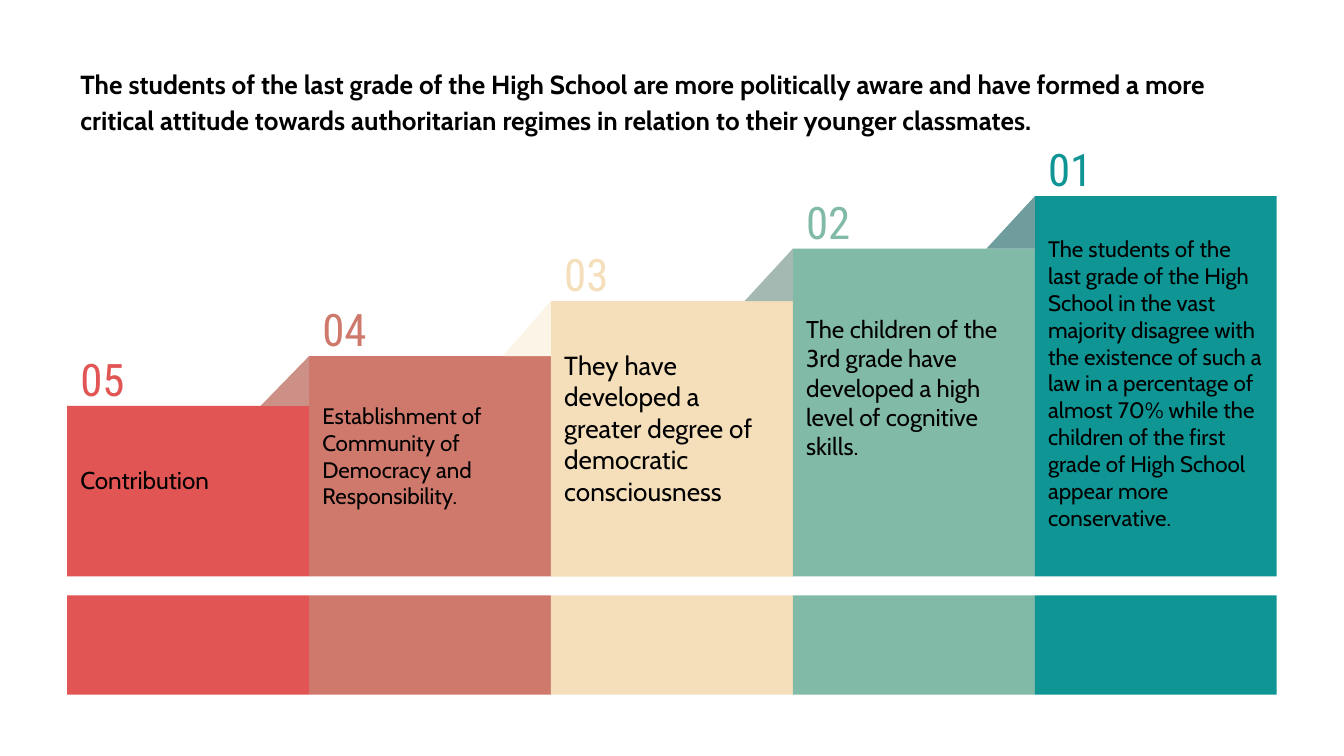
from dataclasses import dataclass

from pptx import Presentation
from pptx.dml.color import RGBColor
from pptx.enum.shapes import MSO_SHAPE
from pptx.enum.text import MSO_ANCHOR
from pptx.shapes.autoshape import Shape
from pptx.slide import Slide
from pptx.util import Inches, Pt

BLACK = RGBColor(0x00, 0x00, 0x00)
RED = RGBColor(0xE1, 0x55, 0x54)
CLAY = RGBColor(0xCE, 0x79, 0x6B)
CLAY_FOLD = RGBColor(0xCC, 0x90, 0x87)
SAND = RGBColor(0xF5, 0xDF, 0xBB)
SAND_FOLD = RGBColor(0xFC, 0xF4, 0xE7)
SAGE = RGBColor(0x82, 0xBA, 0xA8)
SAGE_FOLD = RGBColor(0xA3, 0xB9, 0xB2)
TEAL = RGBColor(0x0E, 0x95, 0x94)
TEAL_FOLD = RGBColor(0x6F, 0x9C, 0x9C)

BODY_FONT = "Cabin"
NUMBER_FONT = "Roboto Condensed"

SLIDE_WIDTH = 10
SLIDE_HEIGHT = SLIDE_WIDTH * 9 / 16
LEFT = 0.5
STEP_WIDTH = 1.8
STEP_BOTTOM = 4.29
BASE_TOP, BASE_HEIGHT = 4.43, 0.74
FOLD_WIDTH = 0.36
NUMBER_WIDTH, NUMBER_HEIGHT = 0.73, 0.41

HEADING = (
    "The students of the last grade of the High School are more politically aware "
    "and have formed a more critical attitude towards authoritarian regimes in "
    "relation to their younger classmates."
)


@dataclass
class Step:
    number: str
    top: float
    color: RGBColor
    fold_color: RGBColor | None
    statement: str
    size: int
    statement_top: float
    statement_height: float


STEPS = [
    Step("05", 3.02, RED, None, "Contribution", 13, 3.36, 0.73),
    Step("04", 2.65, CLAY, CLAY_FOLD,
         "Establishment of Community of Democracy and Responsibility.",
         12, 2.89, 1.02),
    Step("03", 2.24, SAND, SAND_FOLD,
         "They have developed a greater degree of democratic consciousness",
         14, 2.5, 1.27),
    Step("02", 1.85, SAGE, SAGE_FOLD,
         "The children of the 3rd grade have developed a high level of "
         "cognitive skills.", 13, 2.24, 1.41),
    Step("01", 1.46, TEAL, TEAL_FOLD,
         "The students of the last grade of the High School in the vast majority "
         "disagree with the existence of such a law in a percentage of almost 70% "
         "while the children of the first grade of High School appear more "
         "conservative.", 12, 1.65, 2.45),
]


def paint(shape: Shape, color: RGBColor) -> None:
    shape.fill.solid()
    shape.fill.fore_color.rgb = color
    shape.line.fill.background()
    shape.shadow.inherit = False


def add_block(slide: Slide, left: float, top: float, height: float,
              color: RGBColor) -> None:
    block = slide.shapes.add_shape(
        MSO_SHAPE.RECTANGLE, Inches(left), Inches(top),
        Inches(STEP_WIDTH), Inches(height))
    paint(block, color)


def add_fold(slide: Slide, left: float, top: float, bottom: float,
             color: RGBColor) -> None:
    """Draw the triangle that leads from the lower step up to the step at left."""
    builder = slide.shapes.build_freeform(Inches(left), Inches(top))
    builder.add_line_segments([
        (Inches(left - FOLD_WIDTH), Inches(bottom)),
        (Inches(left), Inches(bottom)),
    ])
    paint(builder.convert_to_shape(), color)


def add_text(slide: Slide, left: float, top: float, width: float, height: float,
             text: str, font: str, size: int, color: RGBColor,
             anchor: MSO_ANCHOR = MSO_ANCHOR.TOP, bold: bool = False) -> Shape:
    box = slide.shapes.add_textbox(
        Inches(left), Inches(top), Inches(width), Inches(height))
    frame = box.text_frame
    frame.word_wrap = True
    frame.vertical_anchor = anchor
    frame.margin_left = frame.margin_right = Inches(0.1)
    frame.margin_top = frame.margin_bottom = Inches(0.1)
    frame.text = text
    run_font = frame.paragraphs[0].runs[0].font
    run_font.name = font
    run_font.size = Pt(size)
    run_font.bold = bold
    run_font.color.rgb = color
    return box


def add_heading(slide: Slide) -> None:
    heading = add_text(slide, LEFT, 0.45, 9, 0.58, HEADING, BODY_FONT, 14, BLACK,
                       MSO_ANCHOR.MIDDLE, bold=True)
    paragraph = heading.text_frame.paragraphs[0]
    paragraph.line_spacing = 1.15
    paragraph.space_before = paragraph.space_after = Pt(12)


def add_step(slide: Slide, step: Step, left: float) -> None:
    add_block(slide, left, step.top, STEP_BOTTOM - step.top, step.color)
    add_block(slide, left, BASE_TOP, BASE_HEIGHT, step.color)
    add_text(slide, left, step.top - NUMBER_HEIGHT, NUMBER_WIDTH, NUMBER_HEIGHT,
             step.number, NUMBER_FONT, 24, step.color, MSO_ANCHOR.MIDDLE)
    add_text(slide, left, step.statement_top, STEP_WIDTH, step.statement_height,
             step.statement, BODY_FONT, step.size, BLACK)


def main() -> None:
    presentation = Presentation()
    presentation.slide_width = Inches(SLIDE_WIDTH)
    presentation.slide_height = Inches(SLIDE_HEIGHT)
    slide = presentation.slides.add_slide(presentation.slide_layouts[6])

    add_heading(slide)
    for index, step in enumerate(STEPS):
        left = LEFT + index * STEP_WIDTH
        add_step(slide, step, left)
        if step.fold_color is not None:
            add_fold(slide, left, step.top, STEPS[index - 1].top, step.fold_color)

    presentation.save("out.pptx")


if __name__ == "__main__":
    main()
